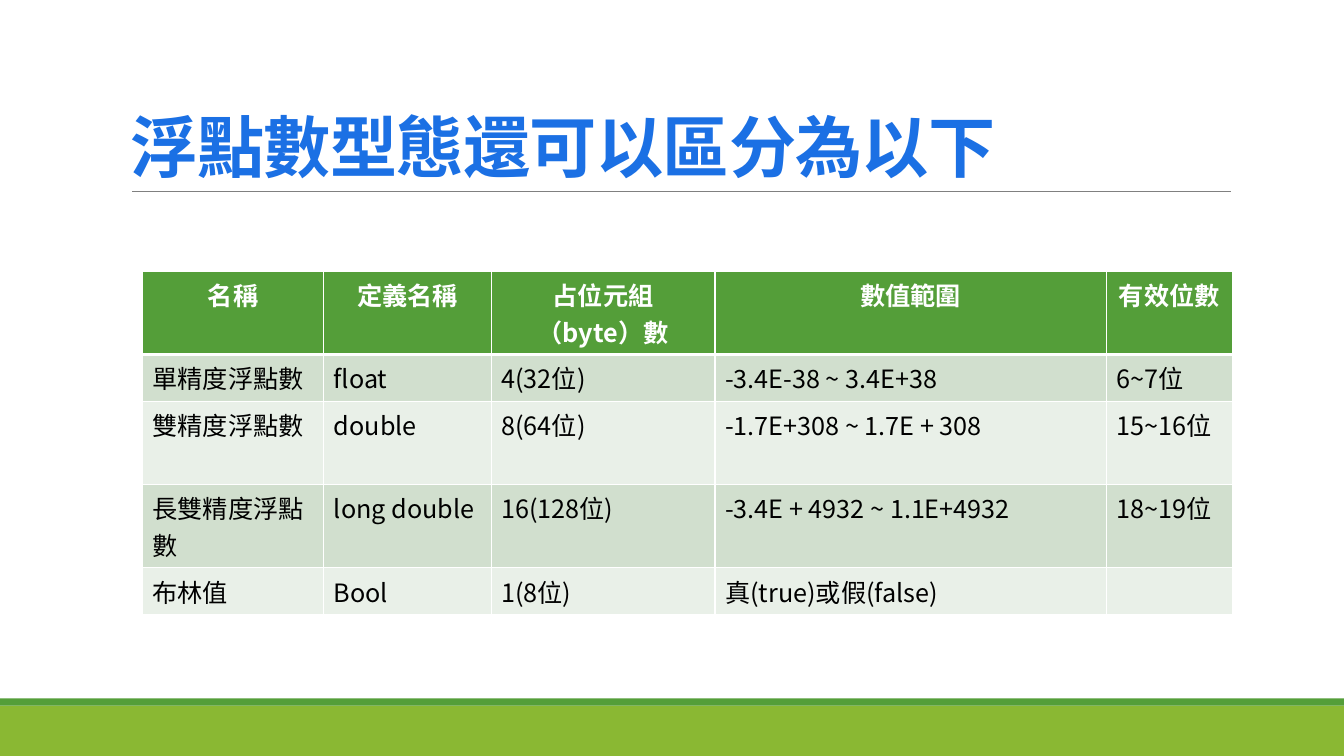
from lxml import etree
from pptx import Presentation
from pptx.dml.color import RGBColor
from pptx.enum.shapes import MSO_CONNECTOR, MSO_SHAPE
from pptx.enum.text import MSO_ANCHOR, PP_ALIGN
from pptx.oxml.ns import qn
from pptx.util import Cm, Pt

RECT = MSO_SHAPE.RECTANGLE
STRAIGHT = MSO_CONNECTOR.STRAIGHT
BOTTOM = MSO_ANCHOR.BOTTOM
LEFT, CENTER = PP_ALIGN.LEFT, PP_ALIGN.CENTER

WHITE = RGBColor(0xFF, 0xFF, 0xFF)
BLACK = RGBColor(0x00, 0x00, 0x00)
GRAY = RGBColor(0x80, 0x80, 0x80)
BLUE = RGBColor(0x1B, 0x70, 0xE4)
LIME = RGBColor(0x8A, 0xB8, 0x33)
GREEN = RGBColor(0x54, 0x9E, 0x39)
BANDS = (RGBColor(0xD1, 0xDF, 0xCE), RGBColor(0xE9, 0xF0, 0xE8))

WIDTH, HEIGHT = 33.87, 19.05
COL_WIDTHS = (4.57, 4.22, 5.64, 9.86, 3.17)
ROW_HEIGHTS = (2.06, 1.17, 2.1, 2.1, 1.17)
ROWS = (
    ("名稱", "定義名稱", "占位元組（byte）數", "數值範圍", "有效位數"),
    ("單精度浮點數", "float", "4(32位)", "-3.4E-38 ~ 3.4E+38", "6~7位"),
    ("雙精度浮點數", "double", "8(64位)", "-1.7E+308 ~ 1.7E + 308", "15~16位"),
    ("長雙精度浮點數", "long double", "16(128位)", "-3.4E + 4932 ~ 1.1E+4932", "18~19位"),
    ("布林值", "Bool", "1(8位)", "真(true)或假(false)", ""),
)


class SlideBuilder:
    font = "Noto Sans CJK TC"

    def __init__(self, slide):
        self.s = slide

    def style(self, p, size, color, bold=False, align=LEFT):
        p.alignment = align
        for r in p.runs:
            r.font.size = Pt(size)
            r.font.bold = bold
            r.font.color.rgb = color
            r.font.name = self.font
            etree.SubElement(r.font._element, qn("a:ea"), typeface=self.font)

    def bar(self, top, height, color):
        sp = self.s.shapes.add_shape(RECT, 0, Cm(top), Cm(WIDTH), Cm(height))
        sp.shadow.inherit = False
        sp.fill.solid()
        sp.fill.fore_color.rgb = color
        sp.line.fill.background()

    def rule(self, left, right, y):
        line = self.s.shapes.add_connector(STRAIGHT, Cm(left), Cm(y), Cm(right), Cm(y))
        line.line.color.rgb = GRAY
        line.line.width = Pt(0.5)
        etree.SubElement(line._element.spPr, qn("a:effectLst"))

    def title(self, text, left, top, width, height):
        sp = self.s.shapes.add_textbox(Cm(left), Cm(top), Cm(width), Cm(height))
        tf = sp.text_frame
        tf.word_wrap = True
        tf.vertical_anchor = BOTTOM
        tf.text = text
        p = tf.paragraphs[0]
        p.line_spacing = 0.85
        self.style(p, 48, BLUE, bold=True)
        p.runs[0].font._element.set("spc", "-50")

    def borders(self, cell, bottom):
        """Draw white cell edges; bottom is the lower edge width in points."""
        tcPr = cell._tc.get_or_add_tcPr()
        edges = (("L", 1), ("R", 1), ("T", 1), ("B", bottom))
        for i, (side, width) in enumerate(edges):
            ln = etree.Element(qn(f"a:ln{side}"), w=str(Pt(width)))
            fill = etree.SubElement(ln, qn("a:solidFill"))
            etree.SubElement(fill, qn("a:srgbClr"), val=str(WHITE))
            tcPr.insert(i, ln)

    def table(self, rows, left, top, col_widths, row_heights):
        table = self.s.shapes.add_table(
            len(rows), len(col_widths), Cm(left), Cm(top),
            Cm(sum(col_widths)), Cm(sum(row_heights))).table
        for col, width in zip(table.columns, col_widths):
            col.width = Cm(width)
        for i, (values, height) in enumerate(zip(rows, row_heights)):
            table.rows[i].height = Cm(height)
            header = i == 0
            for cell, value in zip(table.rows[i].cells, values):
                cell.text = value
                cell.fill.solid()
                cell.fill.fore_color.rgb = GREEN if header else BANDS[(i - 1) % 2]
                self.borders(cell, bottom=3 if header else 1)
                self.style(cell.text_frame.paragraphs[0], 18,
                           WHITE if header else BLACK, bold=header,
                           align=CENTER if header else LEFT)


def main():
    prs = Presentation()
    prs.slide_width, prs.slide_height = Cm(WIDTH), Cm(HEIGHT)
    b = SlideBuilder(prs.slides.add_slide(prs.slide_layouts[6]))
    b.bar(17.78, 1.27, LIME)
    b.bar(17.6, 0.18, GREEN)
    b.rule(3.33, 31.01, 4.83)
    b.table(ROWS, 3.59, 6.84, COL_WIDTHS, ROW_HEIGHTS)
    b.title("浮點數型態還可以區分為以下", 3.05, 0.79, 27.94, 4.04)
    prs.save("out.pptx")


if __name__ == "__main__":
    main()
